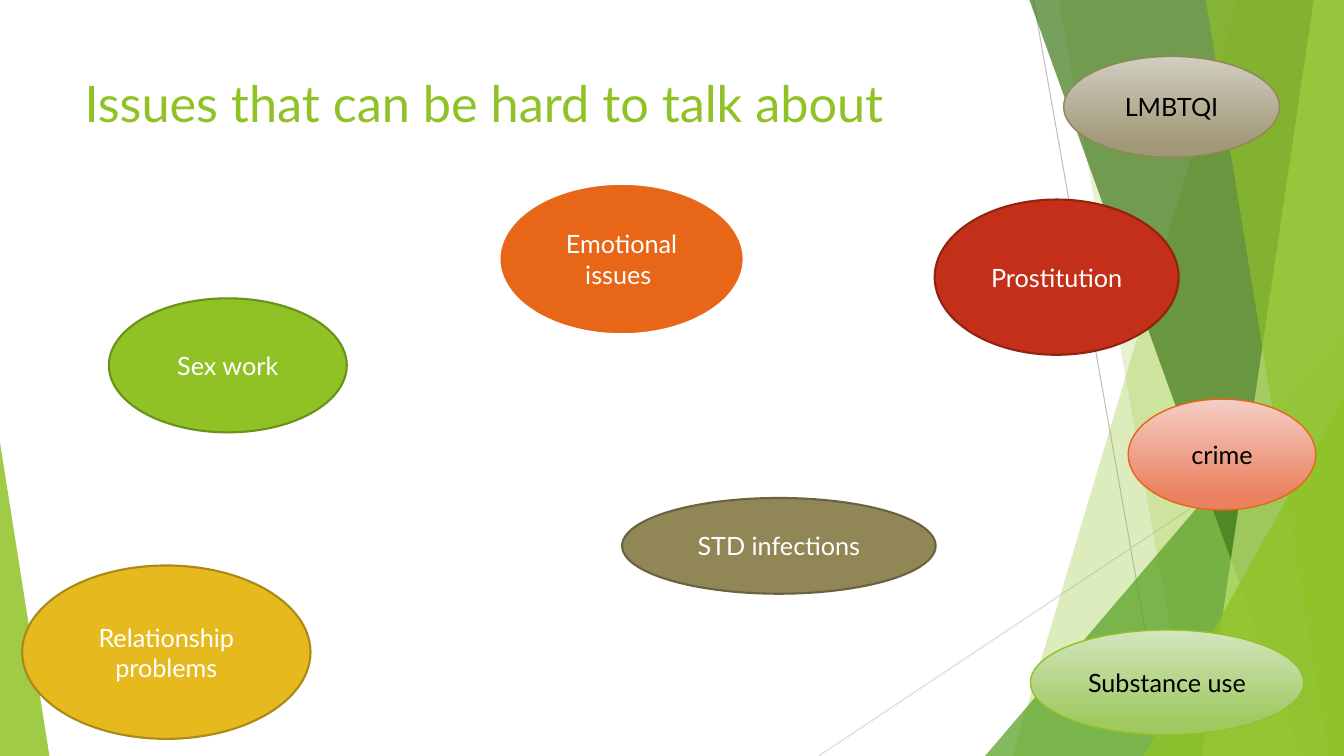
from lxml import etree
from pptx import Presentation
from pptx.dml.color import RGBColor
from pptx.enum.shapes import MSO_CONNECTOR, MSO_SHAPE
from pptx.enum.text import MSO_ANCHOR, PP_ALIGN
from pptx.oxml.ns import qn
from pptx.util import Inches, Pt

# Content
WIDTH, HEIGHT = 13.33, 7.5
FONT = "Lato"
TITLE = ("Issues that can be hard to talk about", (0.74, 0.67, 9.4, 1.44))

COLORS = {
    "white": "FFFFFF", "black": "000000",
    "gray": "BFBFBF", "pale gray": "D9D9D9",
    "green": "90C226", "green edge": "6B901C", "leaf": "54A021",
    "forest": "3F7819", "lime": "C0E474",
    "red": "C42F1A", "red edge": "912313",
    "olive": "918655", "olive edge": "6B633F",
    "gold": "E6B91E", "gold edge": "AA8916", "orange": "E76618",
    "green top": "D3E5BE", "green bottom": "A0C962",
    "coral top": "F5CEC5", "coral bottom": "EA815F",
    "olive top": "D1CDC0", "olive bottom": "A19877",
}

# Start, end, color
THIN_LINES = [
    ((10.25, 0), (11.58, HEIGHT), "gray"),
    ((WIDTH, 4.03), (8.12, HEIGHT), "pale gray"),
]

# Bands: left edge at top and bottom. Triangles: left, top, width, apex position.
BACKDROP = [
    ("band", (12.28, 10.04), "green", 30),
    ("band", (10.5, 11.83), "green", 20),
    ("triangle", (9.77, 3.33, 3.56, 1), "leaf", 72),
    ("band", (10.21, 12.91), "forest", 70),
    ("band", (13.03, 11.92), "lime", 70),
    ("band", (11.96, 13.18), "green", 65),
    ("triangle", (11.34, 3.93, 1.99, 1), "green", 80),
    ("triangle", (0, 4.39, 0.49, 0), "green", 85),
]

# Label, box, fill (two colors for a gradient), outline, outline width, text color
ISSUES = [
    ("Sex work", (1.08, 2.96, 2.36, 1.33), ["green"], "green edge", 1.5, "white"),
    ("Prostitution", (9.27, 1.98, 2.42, 1.54), ["red"], "red edge", 1.5, "white"),
    ("STD infections", (6.17, 4.94, 3.11, 0.95), ["olive"], "olive edge", 1.5, "white"),
    ("Relationship problems", (0.22, 5.61, 2.86, 1.72), ["gold"], "gold edge", 1.5, "white"),
    ("Emotional issues ", (4.95, 1.82, 2.43, 1.5), ["orange"], "white", 2, "white"),
    ("Substance use", (10.22, 6.25, 2.71, 1.04), ["green top", "green bottom"], "green", 1, "black"),
    ("crime", (11.19, 3.96, 1.86, 1.1), ["coral top", "coral bottom"], "orange", 1, "black"),
    ("LMBTQI", (10.55, 0.56, 2.14, 1), ["olive top", "olive bottom"], "olive", 1, "black"),
]
GRADIENT_POSITIONS = (0, 0.88)


def rgb(name):
    return RGBColor.from_string(COLORS[name])


def inches(values):
    return [Inches(value) for value in values]


def write_text(shape, text, size, color, alignment, anchor):
    frame = shape.text_frame
    for name, value in {"word_wrap": True, "vertical_anchor": anchor}.items():
        setattr(frame, name, value)
    paragraph = frame.paragraphs[0]
    paragraph.alignment = alignment
    run = paragraph.add_run()
    run.text = text
    for name, value in {"name": FONT, "size": Pt(size)}.items():
        setattr(run.font, name, value)
    run.font.color.rgb = rgb(color)


def add_thin_line(shapes, start, end, color):
    line = shapes.add_connector(MSO_CONNECTOR.STRAIGHT, *inches(start + end))
    line.line.color.rgb = rgb(color)
    line.line.width = Pt(0.75)
    etree.SubElement(line._element.spPr, qn("a:effectLst"))


def add_backdrop(shapes, kind, geometry, color, opacity):
    if kind == "band":
        top_x, bottom_x = geometry
        corners = [(top_x, 0), (WIDTH, 0), (WIDTH, HEIGHT), (bottom_x, HEIGHT)]
        points = [tuple(inches(corner)) for corner in corners]
        builder = shapes.build_freeform(*points[0])
        builder.add_line_segments(points[1:], close=True)
        shape = builder.convert_to_shape()
    else:
        left, top, width, apex = geometry
        box = inches((left, top, width, HEIGHT - top))
        shape = shapes.add_shape(MSO_SHAPE.ISOSCELES_TRIANGLE, *box)
        shape.adjustments[0] = apex
    shape.shadow.inherit = False
    shape.line.fill.background()
    shape.fill.solid()
    shape.fill.fore_color.rgb = rgb(color)
    color_element = shape._element.spPr.find(qn("a:solidFill"))[0]
    etree.SubElement(color_element, qn("a:alpha"), val=str(opacity * 1000))


def add_issue(shapes, label, box, fills, outline, width, text_color):
    shape = shapes.add_shape(MSO_SHAPE.OVAL, *inches(box))
    shape.shadow.inherit = False
    if len(fills) == 1:
        shape.fill.solid()
        shape.fill.fore_color.rgb = rgb(fills[0])
    else:
        shape.fill.gradient()
        shape.fill.gradient_angle = 270
        for stop, name, position in zip(shape.fill.gradient_stops, fills, GRADIENT_POSITIONS):
            stop.color.rgb = rgb(name)
            stop.position = position
    shape.line.color.rgb = rgb(outline)
    shape.line.width = Pt(width)
    write_text(shape, label, 18, text_color, PP_ALIGN.CENTER, MSO_ANCHOR.MIDDLE)


def main():
    presentation = Presentation()
    presentation.slide_width = Inches(WIDTH)
    presentation.slide_height = Inches(HEIGHT)
    slide = presentation.slides.add_slide(presentation.slide_layouts[6])
    shapes = slide.shapes

    # Green backdrop
    for thin_line in THIN_LINES:
        add_thin_line(shapes, *thin_line)
    for part in BACKDROP:
        add_backdrop(shapes, *part)

    # Title
    title, title_box = TITLE
    text_box = shapes.add_textbox(*inches(title_box))
    write_text(text_box, title, 36, "green", PP_ALIGN.LEFT, MSO_ANCHOR.TOP)

    # Issue ovals
    for issue in ISSUES:
        add_issue(shapes, *issue)

    presentation.save("out.pptx")


if __name__ == "__main__":
    main()
